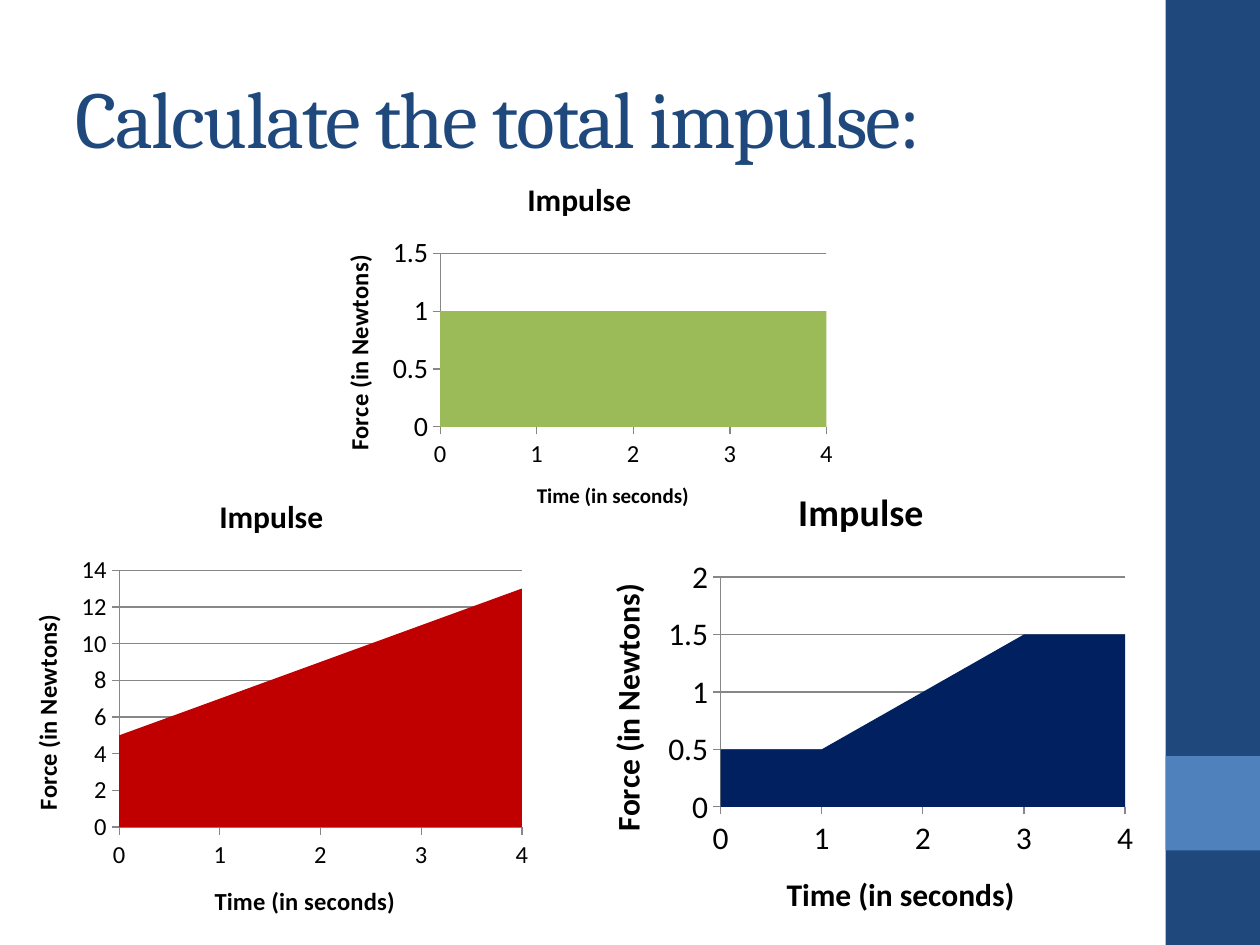
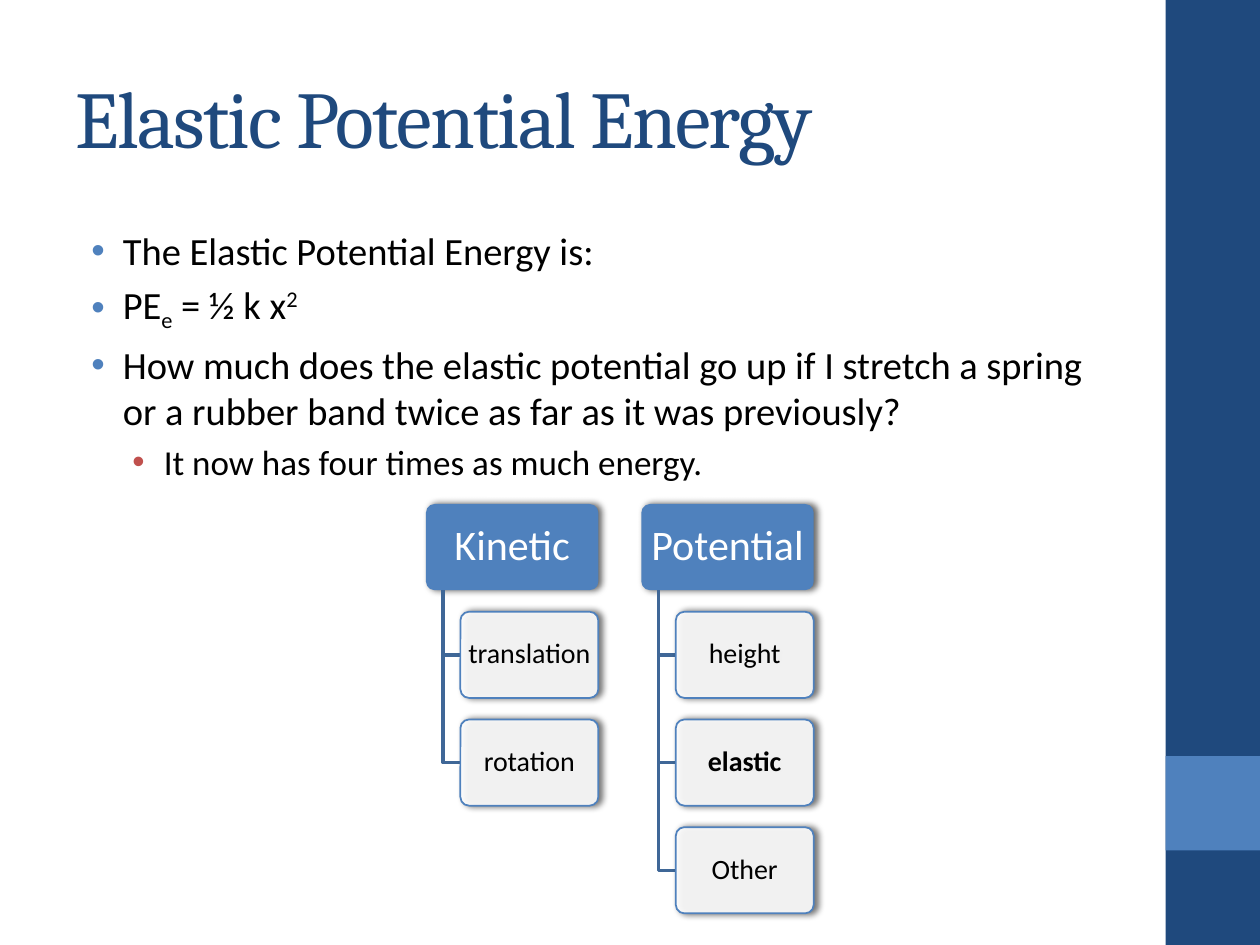
from dataclasses import dataclass

from lxml import etree
from pptx import Presentation
from pptx import util as u
from pptx.chart import data
from pptx.dml import color
from pptx.enum import chart as ch
from pptx.enum import shapes, text
from pptx.oxml import ns


@dataclass(frozen=True)
class Theme:
    navy: str = "1F497D"
    blue: str = "4F81BD"
    steel: str = "3F6797"
    rose: str = "C0504D"
    red: str = "C00000"
    ink: str = "002060"
    green: str = "9BBB59"
    gray: str = "878787"
    black: str = "000000"
    white: str = "FFFFFF"
    head: str = "Cambria"
    body: str = "Calibri"
    title: float = 46
    lists: tuple = (22, 20)
    root: float = 24
    leaf: float = 16


def put(item, **vals):
    for name, val in vals.items():
        setattr(item, name, val)


def rgb(code):
    return color.RGBColor.from_string(code)


def style(font, face, size, code, **more):
    put(font, name=face, size=u.Pt(size), **more)
    font.color.rgb = rgb(code)


def place(item, x, y, w, h):
    put(item, left=u.Pt(x), top=u.Pt(y), width=u.Pt(w), height=u.Pt(h))


def node(parent, tag, **vals):
    """Append an XML child with the given attributes."""
    child = etree.SubElement(parent, ns.qn(tag))
    for name, val in vals.items():
        child.set(name, str(val))
    return child


class Deck:
    def __init__(self, theme):
        self.theme = theme
        self.prs = Presentation()
        put(self.prs, slide_width=u.Pt(720), slide_height=u.Pt(540))
        self.slide = None

    def start(self, title, layout):
        t = self.theme
        self.slide = self.prs.slides.add_slide(self.prs.slide_layouts[layout])
        box = self.slide.shapes.title
        place(box, 36, 21.6, 600, 90)
        frame = box.text_frame
        put(frame, text=title, auto_size=text.MSO_AUTO_SIZE.NONE,
            vertical_anchor=text.MSO_ANCHOR.MIDDLE)
        para = frame.paragraphs[0]
        para.alignment = text.PP_ALIGN.LEFT
        run = para.runs[0]
        style(run.font, t.head, t.title, t.navy)
        run._r.get_or_add_rPr().set("spc", "-100")

    def shape(self, kind, x, y, w, h, fill):
        item = self.slide.shapes.add_shape(
            kind, u.Pt(x), u.Pt(y), u.Pt(w), u.Pt(h))
        item.shadow.inherit = False
        item.fill.solid()
        item.fill.fore_color.rgb = rgb(fill)
        item.line.fill.background()
        return item

    def bands(self):
        """Draw the side bands and move them to the slide master."""
        tree = self.prs.slide_master.shapes.element
        for spot, (y, h, fill) in enumerate(
                [(0, 540, self.theme.navy), (432, 54, self.theme.blue)]):
            band = self.shape(shapes.MSO_SHAPE.RECTANGLE, 666, y, 54, h, fill)
            tree.insert(2 + spot, band.element)

    def list(self, items):
        """Fill the body; each item is a level and (text, baseline) parts."""
        t = self.theme
        box = self.slide.placeholders[1]
        place(box, 36, 126, 600, 156)
        frame = box.text_frame
        frame.auto_size = text.MSO_AUTO_SIZE.NONE
        for i, (level, parts) in enumerate(items):
            para = frame.add_paragraph() if i else frame.paragraphs[0]
            para.level = level
            props = para._p.get_or_add_pPr()
            props.set("marL", str(u.Pt((27, 50.4)[level])))
            props.set("indent", str(u.Pt(-18)))
            tint = node(props, "a:buClr")
            node(tint, "a:srgbClr", val=(t.blue, t.rose)[level])
            node(props, "a:buFont", typeface="Arial")
            node(props, "a:buChar", char="•")
            for words, base in parts:
                run = para.add_run()
                run.text = words
                style(run.font, t.body, t.lists[level], t.black)
                if base:
                    run._r.get_or_add_rPr().set("baseline", str(base * 1000))

    def label(self, frame, words, size):
        """Write a bold chart or axis title."""
        frame.text = words
        style(frame.paragraphs[0].runs[0].font, self.theme.body, size,
              self.theme.black, bold=True)

    def axis(self, axis, words, size, ticks):
        axis.has_title = True
        self.label(axis.axis_title.text_frame, words, size)
        put(axis, major_tick_mark=ch.XL_TICK_MARK.OUTSIDE,
            minor_tick_mark=ch.XL_TICK_MARK.NONE)
        style(axis.tick_labels.font, self.theme.body, ticks, self.theme.black)
        axis.format.line.width = u.Pt(0.75)
        axis.format.line.color.rgb = rgb(self.theme.gray)

    def area(self, spot, vals, fill, top, step, title, time, force):
        """Add an area chart; time and force give (title, tick) sizes."""
        feed = data.CategoryChartData()
        feed.categories = [str(n) for n in range(len(vals))]
        feed.add_series("Series 1", vals)
        chart = self.slide.shapes.add_chart(
            ch.XL_CHART_TYPE.AREA, *map(u.Pt, spot), feed).chart
        put(chart, has_legend=False, has_title=True)
        style(chart.font, self.theme.body, 10, self.theme.black)
        self.label(chart.chart_title.text_frame, "Impulse", title)
        plot = chart.plots[0]
        plot.vary_by_categories = False
        paint = plot.series[0].format.fill
        paint.solid()
        paint.fore_color.rgb = rgb(fill)
        self.axis(chart.category_axis, "Time (in seconds)", *time)
        side = chart.value_axis
        self.axis(side, "Force (in Newtons)", *force)
        put(side, minimum_scale=0, maximum_scale=top, major_unit=step,
            has_major_gridlines=True)
        grid = side.major_gridlines.format.line
        grid.width = u.Pt(0.75)
        grid.color.rgb = rgb(self.theme.gray)
        turn = side.axis_title.text_frame._txBody.bodyPr
        turn.set("rot", "-5400000")
        turn.set("vert", "horz")
        for cross in chart.element.iter(ns.qn("c:crossBetween")):
            cross.set("val", "midCat")

    def card(self, words, x, y, w, h, fill, ink, size, bold=False):
        """Add a rounded box with a soft shadow to the right."""
        box = self.shape(shapes.MSO_SHAPE.ROUNDED_RECTANGLE, x, y, w, h, fill)
        box.adjustments[0] = 0.1
        glow = node(box.element.spPr.find(ns.qn("a:effectLst")),
                    "a:outerShdw", blurRad=u.Pt(4), dist=u.Pt(2), dir=0,
                    algn="ctr", rotWithShape=0)
        node(node(glow, "a:srgbClr", val=self.theme.black),
             "a:alpha", val=60000)
        frame = box.text_frame
        put(frame, word_wrap=True, vertical_anchor=text.MSO_ANCHOR.MIDDLE,
            margin_left=u.Pt(1), margin_right=u.Pt(1),
            margin_top=u.Pt(3), margin_bottom=u.Pt(3))
        para = frame.paragraphs[0]
        put(para, alignment=text.PP_ALIGN.CENTER, line_spacing=0.9)
        run = para.add_run()
        run.text = words
        style(run.font, self.theme.body, size, ink, bold=bold)
        return box

    def elbow(self, x, y, end, foot):
        pen = self.slide.shapes.build_freeform(u.Pt(x), u.Pt(y))
        pen.add_line_segments(
            [(u.Pt(x), u.Pt(foot)), (u.Pt(end), u.Pt(foot))], close=False)
        line = pen.convert_to_shape()
        line.shadow.inherit = False
        line.fill.background()
        line.line.width = u.Pt(2)
        line.line.color.rgb = rgb(self.theme.steel)

    def branch(self, x, y, root, leaves, strong):
        """Hang a column of leaves below a root box."""
        t = self.theme
        w, h = 98.5, 49.25
        self.card(root, x, y, w, h, t.blue, t.white, t.root)
        left = x + 0.2 * w
        for row, leaf in enumerate(leaves, 1):
            top = y + 1.25 * h * row
            self.elbow(x + 0.1 * w, y + h, left, top + h / 2)
            box = self.card(leaf, left, top, 0.8 * w, h, t.white, t.black,
                            t.leaf, leaf == strong)
            box.line.width = u.Pt(1)
            box.line.color.rgb = rgb(t.blue)
            tint = box.element.spPr.find(ns.qn("a:solidFill"))
            node(tint[0], "a:alpha", val=90000)


def main():
    theme = Theme()
    deck = Deck(theme)

    deck.start("Calculate the total impulse:", 5)
    deck.bands()
    deck.area((2, 270, 306, 270), (5, 7, 9, 11, 13), theme.red,
              14, 2, 18, (14, 14), (14, 14))
    deck.area((330, 264, 324, 276), (0.5, 0.5, 1, 1.5, 1.5), theme.ink,
              2, 0.5, 21.6, (18, 18), (18, 18))
    deck.area((180, 90, 302, 216), (1, 1, 1, 1, 1), theme.green,
              1.5, 0.5, 18, (12, 14), (14, 16))

    deck.start("Elastic Potential Energy", 1)
    deck.list([
        (0, [("The Elastic Potential Energy is:", 0)]),
        (0, [("PE", 0), ("e", -25), (" = ½ k x", 0), ("2", 30)]),
        (0, [("How much does the elastic potential go up if I stretch a "
              "spring or a rubber band twice as far as it was previously?",
              0)]),
        (1, [("It now has four times as much energy.", 0)]),
    ])
    trees = {"Kinetic": ["translation", "rotation"],
             "Potential": ["height", "elastic", "Other"]}
    for col, (root, leaves) in enumerate(trees.items()):
        deck.branch(243.4 + 123.1 * col, 288, root, leaves, "elastic")

    deck.prs.save("out.pptx")


if __name__ == "__main__":
    main()
